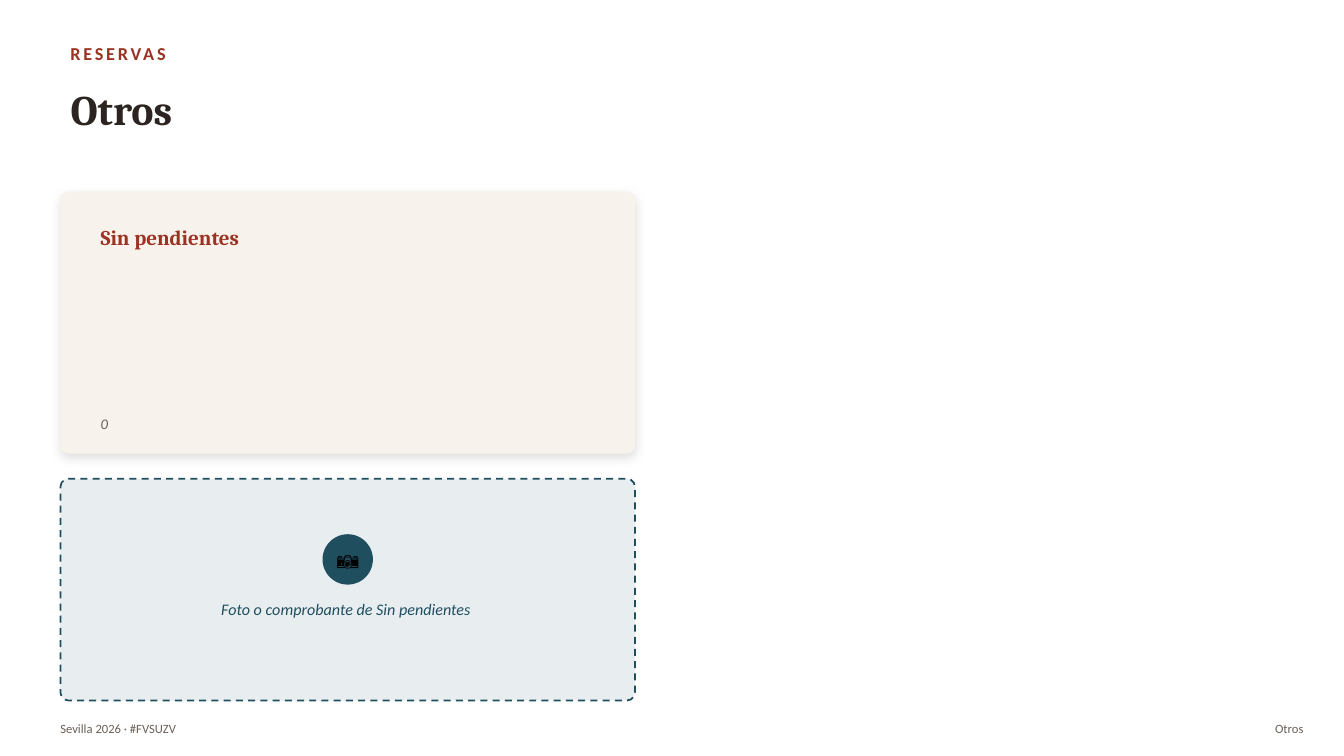
"""Build the "Otros" bookings slide with a card and a photo placeholder panel."""
import pptx
import pptx.dml.color
import pptx.enum.dml
import pptx.enum.shapes
import pptx.enum.text
import pptx.oxml
import pptx.oxml.ns
import pptx.util

Pt = pptx.util.Pt
RGBColor = pptx.dml.color.RGBColor
SHAPE = pptx.enum.shapes.MSO_SHAPE
ANCHOR = pptx.enum.text.MSO_ANCHOR
ALIGN = pptx.enum.text.PP_ALIGN

BRICK = RGBColor(0x9A, 0x33, 0x24)
INK = RGBColor(0x2B, 0x24, 0x20)
STONE = RGBColor(0x6B, 0x60, 0x58)
CREAM = RGBColor(0xF7, 0xF3, 0xEC)
TEAL = RGBColor(0x1F, 0x4E, 0x5F)
MIST = RGBColor(0xE8, 0xEE, 0xF0)
BLACK = RGBColor(0, 0, 0)
WHITE = RGBColor(0xFF, 0xFF, 0xFF)

deck = pptx.Presentation()
deck.slide_width, deck.slide_height = Pt(960), Pt(540)
slide = deck.slides.add_slide(deck.slide_layouts[5])
slide.background.fill.solid()
slide.background.fill.fore_color.rgb = WHITE


def add_panel(preset, box, color, corner=None):
    panel = slide.shapes.add_shape(preset, *map(Pt, box))
    panel.fill.solid()
    panel.fill.fore_color.rgb = color
    panel.line.fill.background()
    panel.shadow.inherit = False
    if corner is not None:
        panel.adjustments[0] = corner
    return panel


def write(holder, text, color, align=ALIGN.LEFT, anchor=ANCHOR.MIDDLE, **font_format):
    frame = holder.text_frame
    frame.text = text
    frame.word_wrap = True
    frame.auto_size = pptx.enum.text.MSO_AUTO_SIZE.NONE
    frame.vertical_anchor = anchor
    frame.paragraphs[0].alignment = align
    font = frame.paragraphs[0].runs[0].font
    font.color.rgb = color
    for attribute, value in font_format.items():
        setattr(font, attribute, value)


heading = slide.shapes.title
title_place = {"left": 43.2, "top": 48.96, "width": 828, "height": 57.6}
for side, length in title_place.items():
    setattr(heading, side, Pt(length))
write(heading, "Otros", INK, name="Cambria", size=Pt(30), bold=True)

card = add_panel(SHAPE.ROUNDED_RECTANGLE, (43.2, 136.8, 410.4, 187.2), CREAM, 0.031)
card_shadow = pptx.oxml.parse_xml(
    f'<a:outerShdw {pptx.oxml.ns.nsdecls("a")} blurRad="{Pt(8)}" dist="{Pt(3)}" '
    'dir="5400000" algn="bl" rotWithShape="0">'
    '<a:srgbClr val="000000"><a:alpha val="12000"/></a:srgbClr></a:outerShdw>'
)
card._element.spPr.find(pptx.oxml.ns.qn("a:effectLst")).append(card_shadow)

photo_area = add_panel(SHAPE.ROUNDED_RECTANGLE, (43.2, 342, 410.4, 158.4), MIST, 0.036)
photo_area.line.color.rgb = TEAL
photo_area.line.width = Pt(1.25)
photo_area.line.dash_style = pptx.enum.dml.MSO_LINE.DASH

camera_box = (230.4, 381.6, 36, 36)
add_panel(SHAPE.OVAL, camera_box, TEAL)

labels = [
    ("RESERVAS", (43.2, 25.2, 720, 25.2), BRICK, {"size": Pt(13), "bold": True}),
    ("Sin pendientes", (64.8, 151.2, 367.2, 36), BRICK,
     {"name": "Cambria", "size": Pt(15), "bold": True}),
    ("0", (64.8, 288, 367.2, 28.8), STONE, {"size": Pt(10.5), "italic": True}),
    ("📷", camera_box, BLACK, {"size": Pt(16), "align": ALIGN.CENTER}),
    ("Foto o comprobante de Sin pendientes ", (72, 424.8, 352.8, 61.2), TEAL,
     {"size": Pt(11.5), "italic": True, "align": ALIGN.CENTER, "anchor": ANCHOR.TOP}),
    ("Otros", (722.16, 509.76, 216, 21.6), STONE, {"size": Pt(9), "align": ALIGN.RIGHT}),
    ("Sevilla 2026 · #FVSUZV", (36, 509.76, 360, 21.6), STONE, {"size": Pt(9)}),
]
for text, box, color, text_format in labels:
    label = slide.shapes.add_textbox(*map(Pt, box))
    write(label, text, color, **{"name": "Calibri", **text_format})
    if text == "RESERVAS":
        label.text_frame.paragraphs[0].runs[0]._r.get_or_add_rPr().set("spc", "200")

deck.save("out.pptx")
